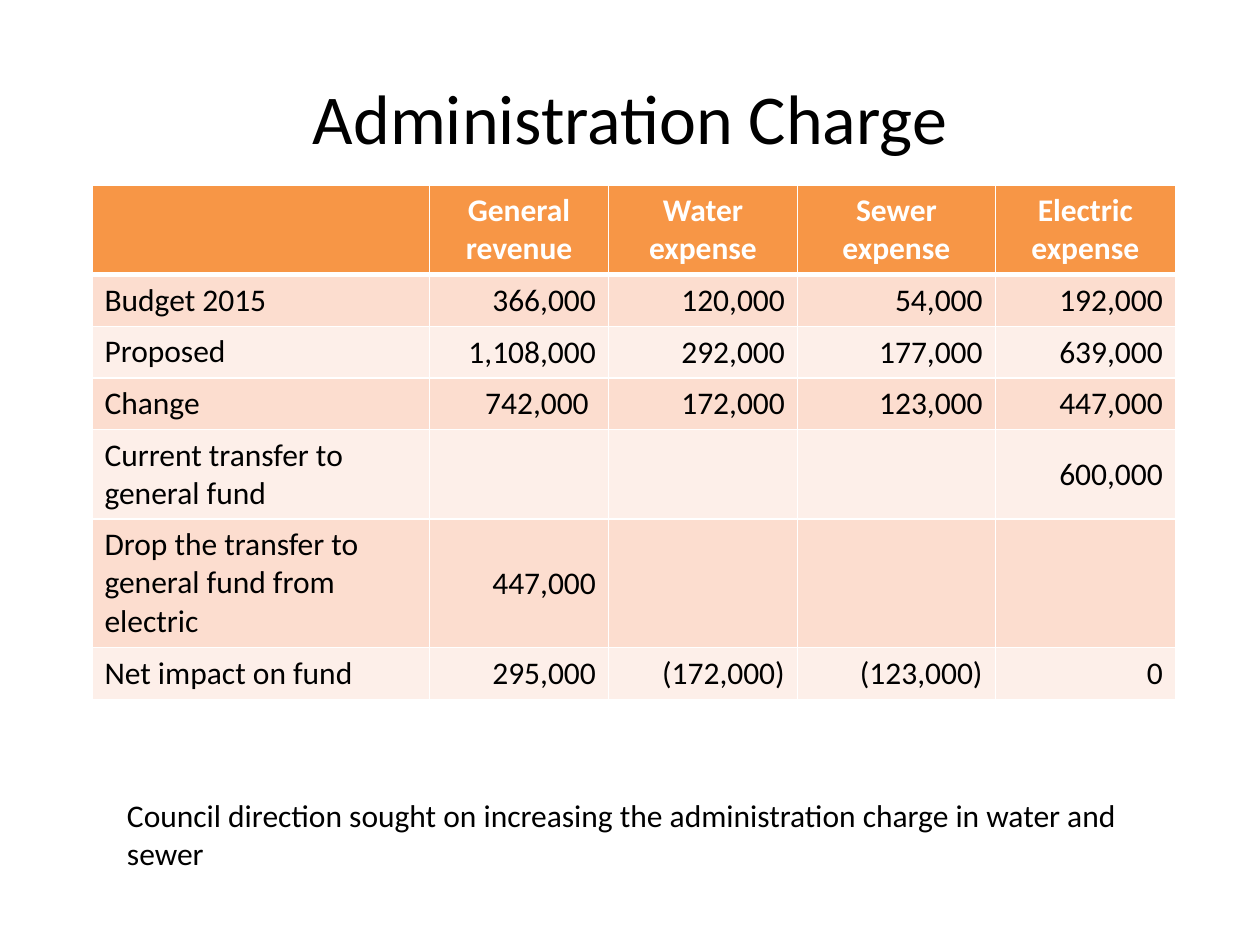
from dataclasses import dataclass

from lxml import etree
from pptx import Presentation
from pptx.dml.color import RGBColor
from pptx.enum.text import MSO_ANCHOR, MSO_AUTO_SIZE, PP_ALIGN
from pptx.oxml.ns import qn
from pptx.util import Inches, Pt

LEFT, CENTER, RIGHT = PP_ALIGN.LEFT, PP_ALIGN.CENTER, PP_ALIGN.RIGHT
TOP, MIDDLE = MSO_ANCHOR.TOP, MSO_ANCHOR.MIDDLE
FIT_SHAPE = MSO_AUTO_SIZE.SHAPE_TO_FIT_TEXT


@dataclass(frozen=True)
class Theme:
    font: str = "Calibri"
    title_size: int = 40
    body_size: int = 18
    ink: str = "000000"
    white: str = "FFFFFF"
    header: str = "F79646"
    bands: tuple = ("FCDDCF", "FDEFE9")


theme = Theme()


def write_text(frame, text, size=theme.body_size, color=theme.ink, bold=False,
               align=LEFT, anchor=TOP):
    frame.word_wrap = True
    frame.vertical_anchor = anchor
    for index, line in enumerate(text.split("\n")):
        para = frame.paragraphs[0] if index == 0 else frame.add_paragraph()
        para.alignment = align
        span = para.add_run()
        span.text = line
        span.font.name = theme.font
        span.font.size = Pt(size)
        span.font.bold = bold
        span.font.color.rgb = RGBColor.from_string(color)


def style_cell(cell, fill, bottom_width):
    properties = cell._tc.get_or_add_tcPr()
    for side, width in (("L", 1), ("R", 1), ("T", 1), ("B", bottom_width)):
        line = etree.SubElement(properties, qn(f"a:ln{side}"), w=str(Pt(width)))
        solid = etree.SubElement(line, qn("a:solidFill"))
        etree.SubElement(solid, qn("a:srgbClr"), val=theme.white)
    cell.fill.solid()
    cell.fill.fore_color.rgb = RGBColor.from_string(fill)


deck = Presentation()
deck.slide_width = Inches(10)
deck.slide_height = Inches(7.5)
page = deck.slides.add_slide(deck.slide_layouts[5])

title = page.shapes.title
title.left, title.top = Inches(0.5), Inches(0.3)
title.width, title.height = Inches(9), Inches(1.25)
write_text(title.text_frame, "Administration Charge", size=theme.title_size,
           align=CENTER, anchor=MIDDLE)

rows = [
    ("", "General\nrevenue", "Water\nexpense", "Sewer\nexpense", "Electric\nexpense"),
    ("Budget 2015", "366,000", "120,000", "54,000", "192,000"),
    ("Proposed", "1,108,000", "292,000", "177,000", "639,000"),
    ("Change", "742,000 ", "172,000", "123,000", "447,000"),
    ("Current transfer to general fund", "", "", "", "600,000"),
    ("Drop the transfer to general fund from electric", "447,000", "", "", ""),
    ("Net impact on fund", "295,000", "(172,000)", "(123,000)", "0"),
]
column_widths = [2.68, 1.42, 1.5, 1.57, 1.43]
row_heights = [0.71, 0.41, 0.41, 0.41, 0.71, 1.02, 0.41]

table = page.shapes.add_table(
    len(rows), len(column_widths), Inches(0.73), Inches(1.47),
    Inches(sum(column_widths)), Inches(sum(row_heights))).table
for column, width in zip(table.columns, column_widths):
    column.width = Inches(width)

for row_index, row in enumerate(rows):
    table.rows[row_index].height = Inches(row_heights[row_index])
    is_header = row_index == 0
    fill = theme.header if is_header else theme.bands[(row_index - 1) % 2]
    for column_index, text in enumerate(row):
        cell = table.cell(row_index, column_index)
        style_cell(cell, fill, bottom_width=3 if is_header else 1)
        if not text:
            continue
        if is_header:
            write_text(cell.text_frame, text, color=theme.white, bold=True, align=CENTER)
        else:
            write_text(cell.text_frame, text, align=RIGHT if column_index else LEFT)
        cell.vertical_anchor = MIDDLE if column_index and row_index > 1 else TOP

note = page.shapes.add_textbox(Inches(0.91), Inches(6.27), Inches(8.5), Inches(0.71))
write_text(note.text_frame, "Council direction sought on increasing the "
           "administration charge in water and sewer")
note.text_frame.auto_size = FIT_SHAPE

deck.save("out.pptx")
